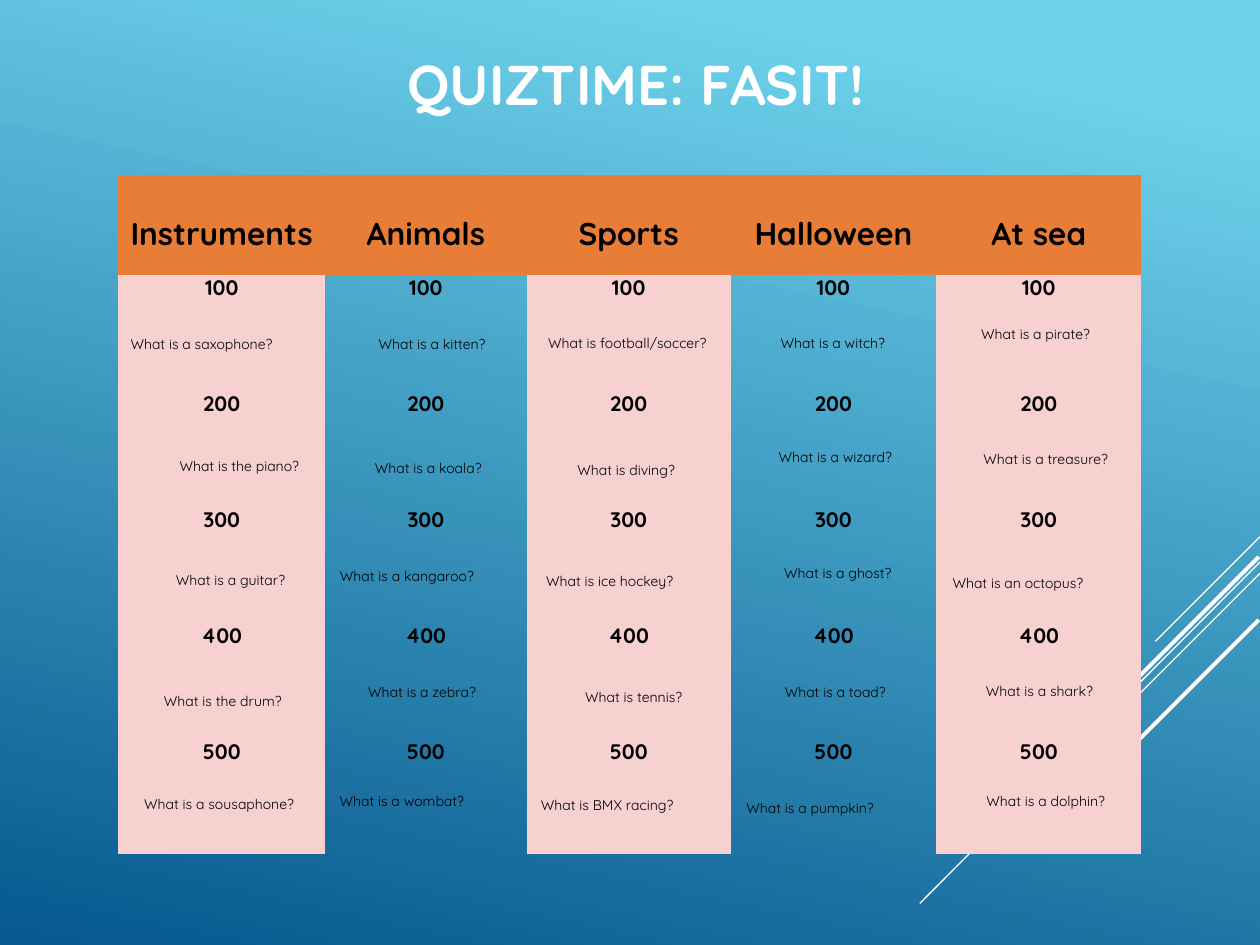
from pptx import Presentation
from pptx.dml.color import RGBColor
from pptx.enum.shapes import MSO_CONNECTOR
from pptx.enum.text import MSO_ANCHOR, PP_ALIGN
from pptx.oxml.ns import qn
from pptx.util import Inches, Pt
from lxml.etree import SubElement

FONT = "Quicksand"
PLAIN = "{2D5ABB26-0587-4C30-8999-92F81FD0307C}"
HEADS = ["Instruments", "Animals", "Sports", "Halloween", "At sea"]
WIDTHS = [1.64, 1.6, 1.62, 1.63, 1.63]
HEIGHTS = [0.79] + [0.92] * 5
RAYS = [
    (10, 4.26, 9.17, 5.09, 0.75),
    (10, 4.46, 7.3, 7.17, 0.75),
    (10, 4.55, 8.28, 6.27, 0.75),
    (9.99, 4.42, 8.42, 5.99, 2.25),
    (9.99, 4.92, 8.85, 6.06, 2.25),
]
ANSWERS = [
    ("What is a saxophone?", 1.6, 2.73),
    ("What is a kitten?", 3.43, 2.73),
    ("What is football/soccer?", 4.98, 2.72),
    ("What is a witch?", 6.61, 2.72),
    ("What is a pirate?", 8.22, 2.65),
    ("What is the piano?", 1.9, 3.7),
    ("What is a koala?", 3.4, 3.71),
    ("What is diving?", 4.97, 3.73),
    ("What is a wizard?", 6.63, 3.63),
    ("What is a treasure?", 8.3, 3.64),
    ("What is a guitar?", 1.83, 4.6),
    ("What is a kangaroo?", 3.23, 4.57),
    ("What is ice hockey?", 4.84, 4.61),
    ("What is a ghost?", 6.65, 4.55),
    ("What is an octopus?", 8.08, 4.63),
    ("What is the drum?", 1.77, 5.56),
    ("What is a zebra?", 3.35, 5.49),
    ("What is tennis?", 5.03, 5.53),
    ("What is a toad?", 6.63, 5.49),
    ("What is a shark?", 8.25, 5.48),
    ("What is a sousaphone?", 1.74, 6.38),
    ("What is a wombat?", 3.19, 6.36),
    ("What is BMX racing?", 4.82, 6.39),
    ("What is a pumpkin?", 6.43, 6.41),
    ("What is a dolphin?", 8.3, 6.36),
]


def paint(color, code):
    color.rgb = RGBColor.from_string(code)


def write(frame, text, size=8, bold=False, color="000000"):
    para = frame.paragraphs[0]
    para.alignment = PP_ALIGN.CENTER
    run = para.add_run()
    run.text = text
    run.font.name = FONT
    run.font.size = Pt(size)
    run.font.bold = bold
    paint(run.font.color, color)


def label(slide, text, mid, row, width=1.65, height=0.37, **style):
    box = slide.shapes.add_textbox(
        Inches(mid - width / 2), Inches(row - height / 2),
        Inches(width), Inches(height))
    frame = box.text_frame
    frame.word_wrap = True
    frame.vertical_anchor = MSO_ANCHOR.MIDDLE
    write(frame, text, **style)


def backdrop(slide):
    fill = slide.background.fill
    fill.gradient()
    fill.gradient_angle = 258
    for stop, place, code in zip(
            fill.gradient_stops, (0.1, 1), ("6ED2EB", "06588E")):
        stop.position = place
        paint(stop.color, code)


def ray(slide, left, top, right, low, width):
    line = slide.shapes.add_connector(
        MSO_CONNECTOR.STRAIGHT, Inches(left), Inches(top),
        Inches(right), Inches(low))
    paint(line.line.color, "FFFFFF")
    line.line.width = Pt(width)
    SubElement(line._element.spPr, qn("a:effectLst"))


def fill_cell(cell, text, code=None, top=0, **style):
    cell.margin_left = cell.margin_right = cell.margin_bottom = 0
    cell.margin_top = Inches(top)
    if code:
        cell.fill.solid()
        paint(cell.fill.fore_color, code)
    else:
        cell.fill.background()
    write(cell.text_frame, text, bold=True, **style)


def board(slide):
    table = slide.shapes.add_table(
        len(HEIGHTS), len(WIDTHS), Inches(0.94), Inches(1.39),
        Inches(sum(WIDTHS)), Inches(sum(HEIGHTS))).table
    table.first_row = table.horz_banding = False
    table._tbl.tblPr.find(qn("a:tableStyleId")).text = PLAIN
    for row, height in zip(table.rows, HEIGHTS):
        row.height = Inches(height)
    for col, (head, width) in enumerate(zip(HEADS, WIDTHS)):
        table.columns[col].width = Inches(width)
        fill_cell(table.cell(0, col), head, code="E87D37", top=0.31, size=18)
        shade = None if col % 2 else "F7D0D0"
        for row in range(1, len(HEIGHTS)):
            fill_cell(table.cell(row, col), str(row * 100), code=shade, size=12)


def main():
    deck = Presentation()
    deck.slide_width, deck.slide_height = Inches(10), Inches(7.5)
    slide = deck.slides.add_slide(deck.slide_layouts[6])
    backdrop(slide)
    for ends in RAYS:
        ray(slide, *ends)
    board(slide)
    label(slide, "QUIZTIME: FASIT!", 5.05, 0.66, width=7.79, height=1.01,
          size=32, bold=True, color="FFFFFF")
    for text, mid, row in ANSWERS:
        label(slide, text, mid, row)
    deck.save("out.pptx")


if __name__ == "__main__":
    main()
